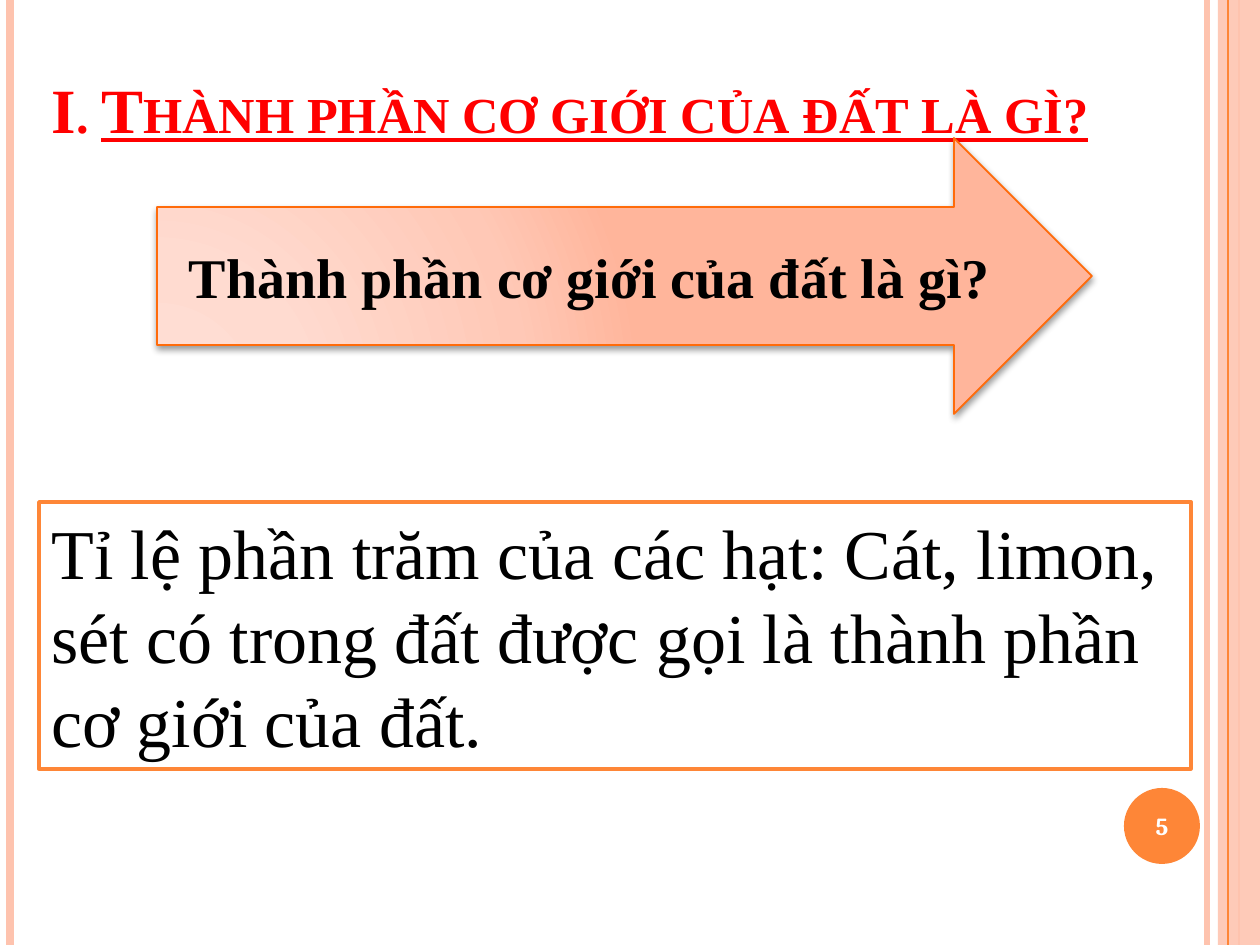
from lxml import etree
from pptx import Presentation
from pptx.dml.color import RGBColor
from pptx.enum.shapes import MSO_CONNECTOR, MSO_SHAPE
from pptx.enum.text import MSO_ANCHOR, MSO_AUTO_SIZE, PP_ALIGN
from pptx.oxml import parse_xml
from pptx.oxml.ns import nsdecls, qn
from pptx.util import Emu, Pt

STRAIGHT = MSO_CONNECTOR.STRAIGHT
RECTANGLE, OVAL, RIGHT_ARROW = MSO_SHAPE.RECTANGLE, MSO_SHAPE.OVAL, MSO_SHAPE.RIGHT_ARROW
MIDDLE, BOTTOM = MSO_ANCHOR.MIDDLE, MSO_ANCHOR.BOTTOM
LEFT, CENTER = PP_ALIGN.LEFT, PP_ALIGN.CENTER

PEACH = RGBColor(0xFE, 0xC3, 0xAE)
ORANGE = RGBColor(0xFE, 0x86, 0x37)
DEEP_ORANGE = RGBColor(0xFF, 0x6B, 0x0A)
RED = RGBColor(0xFF, 0x00, 0x00)
BLACK = RGBColor(0x00, 0x00, 0x00)
WHITE = RGBColor(0xFF, 0xFF, 0xFF)
GRADIENT_STOPS = [(0, "FFDED5"), (30, "FFDBD0"), (75, "FFC8B6"), (100, "FFB59B")]
SERIF = "Times New Roman"
WIDTH, HEIGHT = 1260, 945
SCALE = 914400 / 126


def px(*lengths):
    return [Emu(round(length * SCALE)) for length in lengths]


def write(shape, text, size, color, align, font_name=SERIF, bold=False):
    frame = shape.text_frame
    frame.word_wrap = True
    frame.vertical_anchor = MIDDLE
    frame.text = text
    paragraph = frame.paragraphs[0]
    paragraph.alignment = align
    font = paragraph.runs[0].font
    font.name, font.size, font.bold = font_name, Pt(size), bold
    font.color.rgb = color


presentation = Presentation()
presentation.slide_width, presentation.slide_height = px(WIDTH, HEIGHT)
slide = presentation.slides.add_slide(presentation.slide_layouts[5])
shapes = slide.shapes

# Side stripes and band
band = shapes.add_shape(RECTANGLE, *px(1218, 0, 42, HEIGHT))
band.shadow.inherit = False
band.fill.solid()
band.fill.fore_color.rgb = PEACH
band.line.fill.background()
band_color = band.fill._xPr.find(qn("a:solidFill"))[0]
etree.SubElement(band_color, qn("a:alpha"), val="87000")

for x, color, width in [(1207, PEACH, 3), (10, PEACH, 4.5), (1239, PEACH, 1.5), (1228, ORANGE, 0.75)]:
    stripe = shapes.add_connector(STRAIGHT, *px(x, 0, x, HEIGHT))
    stripe.line.color.rgb = color
    stripe.line.width = Pt(width)
    etree.SubElement(stripe._element.spPr, qn("a:effectLst"))

# Title
title = shapes.title
title.left, title.top, title.width, title.height = px(39, 9, 1177, 215)
frame = title.text_frame
frame.auto_size = MSO_AUTO_SIZE.NONE
frame.word_wrap = True
frame.vertical_anchor = BOTTOM
frame.margin_bottom, = px(78)
paragraph = frame.paragraphs[0]
paragraph.alignment = LEFT
for text, underline in [("I. ", False), ("Thành phần cơ giới của đất là gì?", True)]:
    run = paragraph.add_run()
    run.text = text
    font = run.font
    font.name, font.size, font.bold, font.underline = SERIF, Pt(36), True, underline
    font.color.rgb = RED
    font._element.set("cap", "small")

# Question arrow with radial gradient and soft shadow
arrow = shapes.add_shape(RIGHT_ARROW, *px(157, 138, 935, 276))
arrow.fill.gradient()
stops = "".join(
    f'<a:gs pos="{position * 1000}"><a:srgbClr val="{color}"/></a:gs>'
    for position, color in GRADIENT_STOPS
)
properties = arrow._element.spPr
properties.replace(properties.find(qn("a:gradFill")), parse_xml(
    f'<a:gradFill {nsdecls("a")} rotWithShape="1"><a:gsLst>{stops}</a:gsLst><a:path path="circle">'
    '<a:fillToRect l="5000" t="100000" r="120000" b="10000"/></a:path></a:gradFill>'))
arrow.line.color.rgb = DEEP_ORANGE
arrow.line.width = Pt(1)
arrow.shadow.inherit = False
properties.find(qn("a:effectLst")).append(parse_xml(
    f'<a:outerShdw {nsdecls("a")} blurRad="{Pt(4)}" dist="{Pt(2)}" dir="5400000" rotWithShape="0">'
    '<a:srgbClr val="000000"><a:alpha val="40000"/></a:srgbClr></a:outerShdw>'))
write(arrow, "Thành phần cơ giới của đất là gì?", 32, BLACK, CENTER, bold=True)

# Answer box
answer = shapes.add_shape(RECTANGLE, *px(39, 502, 1152, 267))
answer.shadow.inherit = False
answer.fill.solid()
answer.fill.fore_color.rgb = WHITE
answer.line.color.rgb = ORANGE
answer.line.width = Pt(2)
write(answer, "Tỉ lệ phần trăm của các hạt: Cát, limon, sét có trong đất "
      "được gọi là thành phần cơ giới của đất.", 40, BLACK, LEFT)

# Page number badge
badge = shapes.add_shape(OVAL, *px(1124, 788, 76, 76))
badge.shadow.inherit = False
badge.fill.solid()
badge.fill.fore_color.rgb = ORANGE
badge.line.fill.background()
number = shapes.add_textbox(*px(1120, 790, 84, 72))
write(number, "5", 14, WHITE, CENTER, font_name="Cambria", bold=True)

presentation.save("out.pptx")
